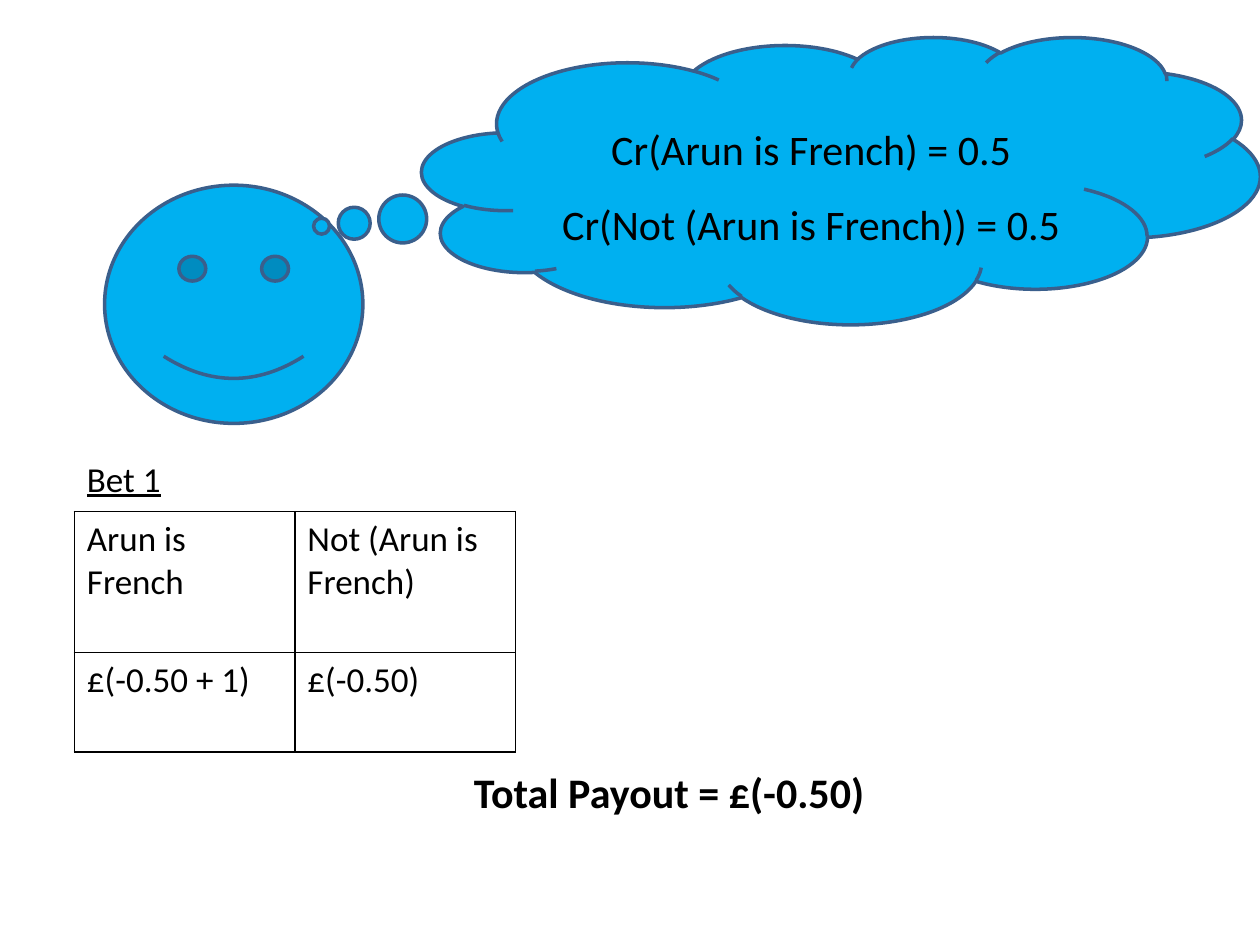
from lxml import etree
from pptx import Presentation
from pptx import util as u
from pptx.dml.color import RGBColor
from pptx.enum import shapes, text
from pptx.oxml.ns import qn

BLACK = RGBColor(0, 0, 0)
SKY = RGBColor(0x00, 0xB0, 0xF0)
NAVY = RGBColor(0x3A, 0x5F, 0x8C)
COLS, ROWS = 100, 75
EDGES = ("lnL", "lnR", "lnT", "lnB")


class Deck:
    """Draws styled elements on a slide, placed by columns and rows of a grid."""

    def __init__(self, font="Calibri"):
        self.font = font
        self.prs = Presentation()
        self.prs.slide_width, self.prs.slide_height = u.Inches(10), u.Inches(7.5)
        self.slide = self.prs.slides.add_slide(self.prs.slide_layouts[6])

    def wide(self, cols):
        return round(self.prs.slide_width * cols / COLS)

    def high(self, rows):
        return round(self.prs.slide_height * rows / ROWS)

    def box(self, x, y, w, h):
        return self.wide(x), self.high(y), self.wide(w), self.high(h)

    def words(self, frame, lines, size, bold=False, under=False, mid=False, gap=None):
        frame.word_wrap = True
        para = frame.paragraphs[0]
        para.line_spacing = gap
        if mid:
            frame.vertical_anchor = text.MSO_ANCHOR.MIDDLE
            para.alignment = text.PP_ALIGN.CENTER
        for i, line in enumerate(lines):
            if i:
                para.add_line_break()
            run = para.add_run()
            run.text = line
            font = run.font
            font.name, font.size = self.font, u.Pt(size)
            font.bold, font.underline = bold, under
            font.color.rgb = BLACK

    def label(self, spot, line, size):
        area = self.slide.shapes.add_textbox(*self.box(*spot))
        self.words(area.text_frame, [line], size, bold=True, mid=True)

    def shape(self, kind, spot):
        form = self.slide.shapes.add_shape(kind, *self.box(*spot))
        form.shadow.inherit = False
        form.fill.solid()
        form.fill.fore_color.rgb = SKY
        form.line.color.rgb = NAVY
        form.line.width = u.Pt(2)
        return form

    def cloud(self, spot, tail, lines, size):
        form = self.shape(shapes.MSO_SHAPE.CLOUD_CALLOUT, spot)
        for i, value in enumerate(tail):
            form.adjustments[i] = value
        self.words(form.text_frame, lines, size, mid=True, gap=1.5)

    def edge(self, cell, shown):
        props = cell._tc.get_or_add_tcPr()
        for i, name in enumerate(EDGES):
            line = etree.Element(qn("a:" + name), w=str(u.Pt(1)))
            if name in shown:
                fill = etree.SubElement(line, qn("a:solidFill"))
                etree.SubElement(fill, qn("a:srgbClr"), val=str(BLACK))
            else:
                etree.SubElement(line, qn("a:noFill"))
            props.insert(i, line)

    def table(self, x, y, width, tall, title, body, size):
        count = len(body[0])
        spot = self.box(x, y, width * count, sum(tall))
        grid = self.slide.shapes.add_table(len(tall), count, *spot).table
        grid.first_row = grid.horz_banding = False
        for col in grid.columns:
            col.width = self.wide(width)
        for row, rows in zip(grid.rows, tall):
            row.height = self.high(rows)
        head = grid.cell(0, 0)
        head.merge(grid.cell(0, count - 1))
        self.words(head.text_frame, [title], size, under=True)
        for r in range(len(tall)):
            for c in range(count):
                cell = grid.cell(r, c)
                cell.fill.background()
                self.edge(cell, EDGES if r else ("lnB",))
                if r:
                    self.words(cell.text_frame, [body[r - 1][c]], size)

    def save(self):
        self.prs.save("out.pptx")


def main():
    deck = Deck()
    bets = [("Arun is French", "Not (Arun is French)"),
            ("£(-0.50 + 1)", "£(-0.50)")]
    deck.table(5.9, 35.9, 17.5, (4.7, 11.2, 7.9), "Bet 1", bets, 20)
    deck.label((10.6, 54.8, 85, 16.1), "Total Payout = £(-0.50)", 24)
    deck.shape(shapes.MSO_SHAPE.SMILEY_FACE, (8.3, 14.7, 20.5, 18.9))
    beliefs = ("Cr(Arun is French) = 0.5", "Cr(Not (Arun is French)) = 0.5")
    deck.cloud((33.5, 2.9, 66.5, 22.8), (-0.62, 0.16), beliefs, 24)
    deck.save()


if __name__ == "__main__":
    main()
